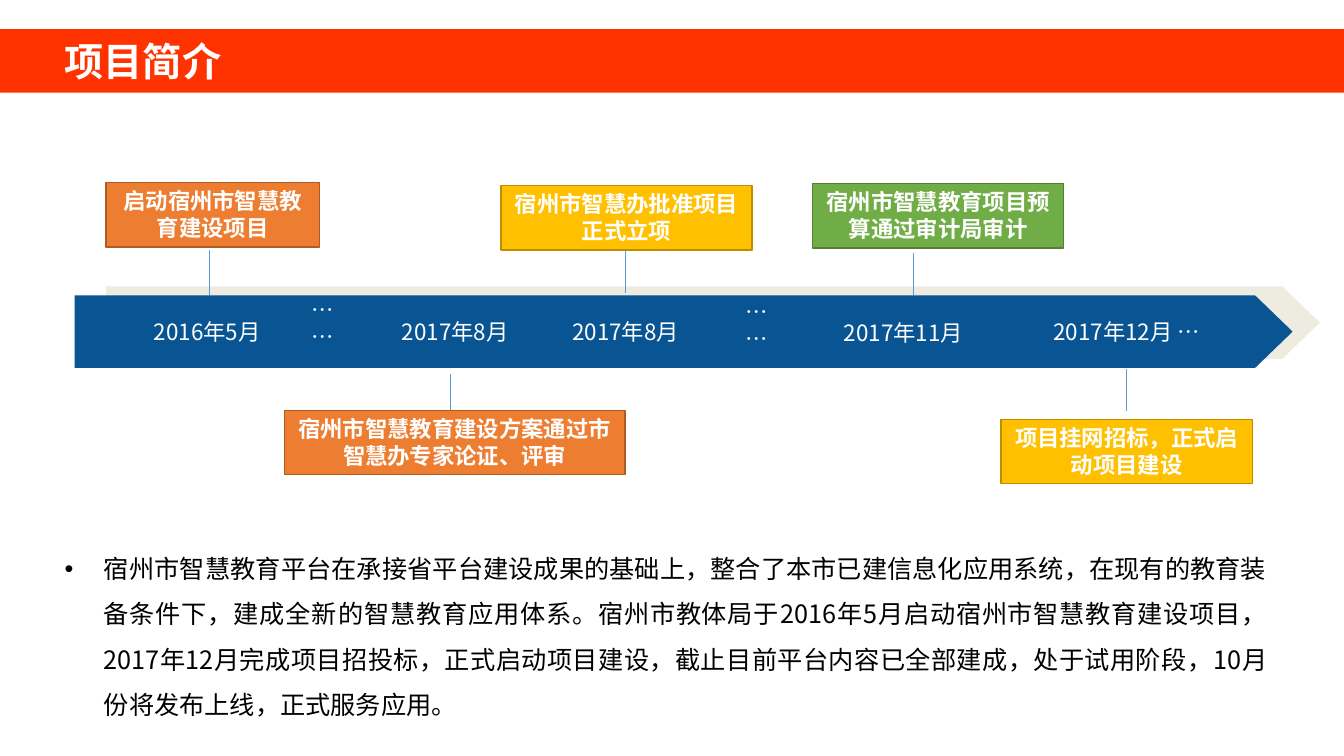
from lxml import etree
from pptx import Presentation
from pptx.dml.color import RGBColor
from pptx.enum.shapes import MSO_CONNECTOR, MSO_SHAPE
from pptx.enum.text import MSO_ANCHOR, MSO_AUTO_SIZE, PP_ALIGN
from pptx.oxml.ns import qn
from pptx.util import Pt

PX = 9144
FONT = "Noto Sans CJK SC"
WHITE = "FFFFFF"
ORANGE = ("ED7D31", "AF5C24")
YELLOW = ("FFC000", "BD8E00")
GREEN = ("70AD47", "538035")
RECTANGLE, PENTAGON = MSO_SHAPE.RECTANGLE, MSO_SHAPE.PENTAGON
STRAIGHT = MSO_CONNECTOR.STRAIGHT
TOP, MIDDLE = MSO_ANCHOR.TOP, MSO_ANCHOR.MIDDLE
FIT_SHAPE, FIXED = MSO_AUTO_SIZE.SHAPE_TO_FIT_TEXT, MSO_AUTO_SIZE.NONE
LEFT, CENTER, JUSTIFY = PP_ALIGN.LEFT, PP_ALIGN.CENTER, PP_ALIGN.JUSTIFY

DATES = [
    ("2016年5月", 66, 17, 131),
    ("……", 218, 9, 57),
    ("2017年8月", 312, 17, 131),
    ("2017年8月", 481, 17, 131),
    ("……", 648, 11, 57),
    ("2017年11月", 750, 18, 144),
    ("2017年12月 …", 959, 17, 169),
]
EVENTS = [
    ("启动宿州市智慧教育建设项目", 31, -112, 212, ORANGE, 134, -45, 0),
    ("宿州市智慧教育建设方案通过市智慧办专家论证、评审", 208, 114, 338, ORANGE, 373, 78, 121),
    ("宿州市智慧办批准项目正式立项", 423, -109, 249, YELLOW, 546, -44, -2),
    ("宿州市智慧教育项目预算通过审计局审计", 732, -111, 249, GREEN, 832, -42, 0),
    ("项目挂网招标，正式启动项目建设", 919, 123, 249, YELLOW, 1043, 73, 115),
]
SUMMARY = (
    "宿州市智慧教育平台在承接省平台建设成果的基础上，整合了本市已建信息化应用系统，"
    "在现有的教育装备条件下，建成全新的智慧教育应用体系。宿州市教体局于2016年5月启动"
    "宿州市智慧教育建设项目，2017年12月完成项目招投标，正式启动项目建设，"
    "截止目前平台内容已全部建成，处于试用阶段，10月份将发布上线，正式服务应用。"
)


def color(value):
    return RGBColor.from_string(value)


def emu(*lengths):
    return [length * PX for length in lengths]


def place(shape, box):
    shape.left, shape.top, shape.width, shape.height = emu(*box)


def write(shape, text, size, ink=WHITE, bold=False, align=CENTER, anchor=TOP, fit=FIT_SHAPE):
    frame = shape.text_frame
    frame.word_wrap = True
    frame.auto_size = fit
    frame.vertical_anchor = anchor
    paragraph = frame.paragraphs[0]
    paragraph.text = text
    paragraph.alignment = align
    font = paragraph.font
    font.name, font.size, font.bold = FONT, Pt(size), bold
    font.color.rgb = color(ink)
    defaults = paragraph._p.pPr.find(qn("a:defRPr"))
    etree.SubElement(defaults, qn("a:ea")).set("typeface", FONT)
    return paragraph


def add_block(slide, kind, box, fill, line=None):
    shape = slide.shapes.add_shape(kind, *emu(*box))
    shape.shadow.inherit = False
    shape.fill.solid()
    shape.fill.fore_color.rgb = color(fill)
    if line:
        shape.line.color.rgb = color(line)
        shape.line.width = Pt(1)
    else:
        shape.line.fill.background()
    return shape


def add_stem(slide, x, start, end):
    stem = slide.shapes.add_connector(STRAIGHT, *emu(x, start, x, end))
    stem.line.color.rgb = color("5B9BD5")
    stem.line.width = Pt(0.5)
    etree.SubElement(stem._element.spPr, qn("a:effectLst"))


def add_header(slide, box):
    left, top, width, height = box
    band = add_block(slide, RECTANGLE, box, "FF3300")
    title = slide.shapes.title
    title._element.addprevious(band._element)
    place(title, (left + 54, top + 3, 1030, height - 6))
    write(title, "项目简介", 28, bold=True, align=LEFT, anchor=MIDDLE, fit=FIXED)


def add_summary(slide, box):
    body = slide.placeholders[1]
    place(body, box)
    paragraph = write(body, SUMMARY, 18, "000000", align=JUSTIFY, fit=FIXED)
    paragraph.line_spacing = 1.5
    paragraph.space_before = Pt(3.6)
    properties = paragraph._p.pPr
    properties.set("marL", str(39 * PX))
    properties.set("indent", str(-39 * PX))
    bullet = etree.Element(qn("a:buChar"))
    bullet.set("char", "•")
    properties.find(qn("a:defRPr")).addprevious(bullet)


def add_timeline(slide, box):
    left, top, width, height = box
    shadow_box = (left + 31, top - 9, width - 4, height)
    for arrow_box, fill in ((shadow_box, "EEECE1"), (box, "095492")):
        arrow = add_block(slide, PENTAGON, arrow_box, fill)
        arrow.adjustments[0] = 0.517
    for text, x, y, label_width in DATES:
        label = slide.shapes.add_textbox(*emu(left + x, top + y, label_width, 37))
        write(label, text, 16, anchor=MIDDLE)
    for text, x, y, event_width, (fill, line), stem_x, start, end in EVENTS:
        add_stem(slide, left + stem_x, top + start, top + end)
        event = add_block(slide, RECTANGLE, (left + x, top + y, event_width, 64), fill, line)
        write(event, text, 16, bold=True)


def main():
    presentation = Presentation()
    presentation.slide_width, presentation.slide_height = emu(1333, 750)
    slide = presentation.slides.add_slide(presentation.slide_layouts[1])
    add_header(slide, (0, 29, 1333, 63))
    add_summary(slide, (54, 529, 1213, 200))
    add_timeline(slide, (74, 293, 1208, 72))
    presentation.save("out.pptx")


if __name__ == "__main__":
    main()
